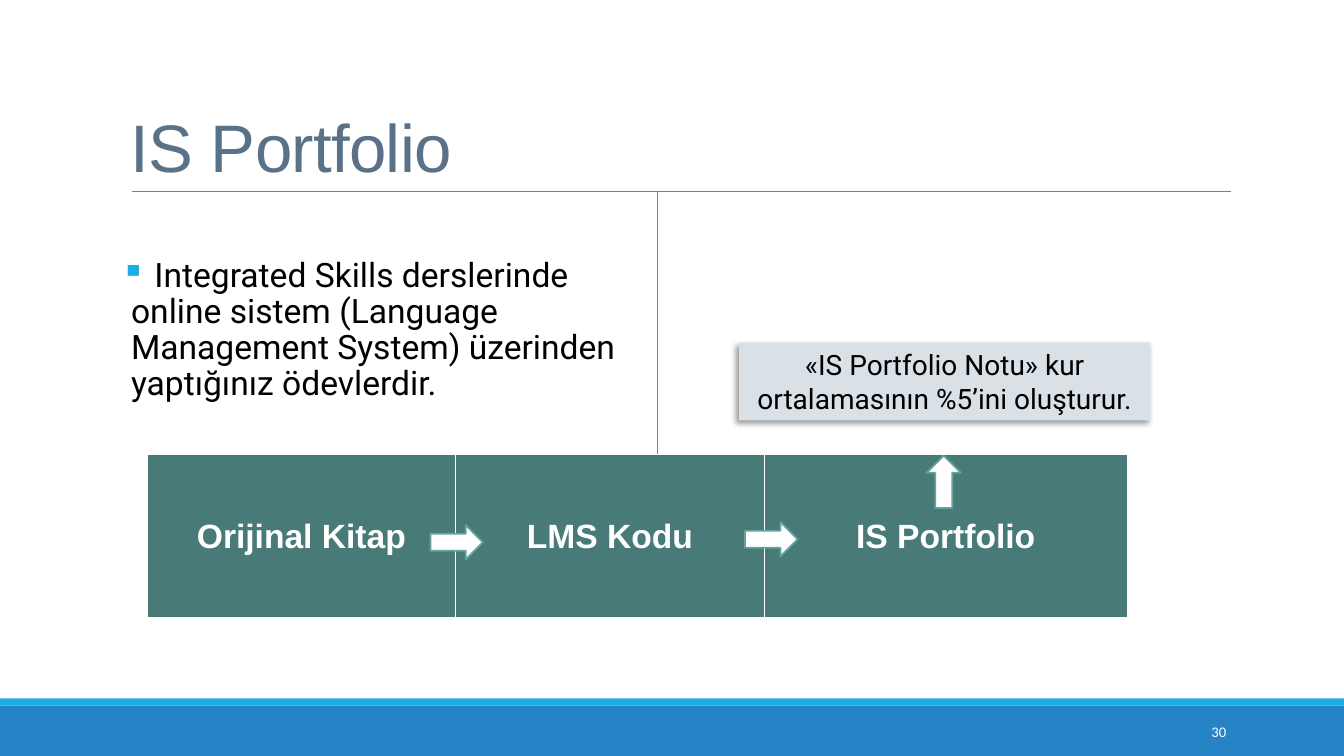
"""Build the IS Portfolio slide with its text, flow table and arrows."""
from lxml.etree import SubElement
from pptx import Presentation
from pptx.dml.color import RGBColor
from pptx.enum.shapes import MSO_CONNECTOR, MSO_SHAPE
from pptx.enum.text import MSO_ANCHOR, PP_ALIGN
from pptx.oxml import parse_xml
from pptx.oxml.ns import nsdecls, qn
from pptx.util import Inches, Pt

WHITE = RGBColor(0xFF, 0xFF, 0xFF)
BLACK = RGBColor(0, 0, 0)
GRAY = RGBColor(0x80, 0x80, 0x80)
BLUE = RGBColor(0x26, 0x83, 0xC6)
CYAN = RGBColor(0x1C, 0xAD, 0xE4)
SLATE = RGBColor(0x59, 0x72, 0x87)
PALE = RGBColor(0xD9, 0xE0, 0xE6)
TEAL = RGBColor(0x48, 0x7B, 0x78)
MINT = RGBColor(0x62, 0xA3, 0x9F)


def write(frame, text, align, **style):
    frame.word_wrap = True
    para = frame.paragraphs[0]
    para.alignment = align
    run = para.add_run()
    run.text = text
    color = style.pop("color")
    for key, value in style.items():
        setattr(run.font, key, value)
    run.font.color.rgb = color
    return para


def draw(kind, place, fill):
    shape = shapes.add_shape(kind, *map(Inches, place))
    shape.shadow.inherit = False
    shape.fill.solid()
    shape.fill.fore_color.rgb = fill
    shape.line.fill.background()
    return shape


deck = Presentation()
deck.slide_width, deck.slide_height = Inches(13.33), Inches(7.5)
slide = deck.slides.add_slide(deck.slide_layouts[6])
shapes = slide.shapes

draw(MSO_SHAPE.RECTANGLE, (0, 7, 13.33, 0.5), BLUE)
draw(MSO_SHAPE.RECTANGLE, (0, 6.93, 13.33, 0.07), CYAN)

for ends, width in [((1.31, 1.9, 12.21, 1.9), 0.5), ((6.52, 1.9, 6.52, 6.09), 1)]:
    rule = shapes.add_connector(MSO_CONNECTOR.STRAIGHT, *map(Inches, ends))
    rule.line.color.rgb = GRAY
    rule.line.width = Pt(width)
    SubElement(rule._element.spPr, qn("a:effectLst"))

title = shapes.add_textbox(Inches(1.2), Inches(0.31), Inches(11), Inches(1.59)).text_frame
title.vertical_anchor = MSO_ANCHOR.BOTTOM
para = write(title, "IS Portfolio", PP_ALIGN.LEFT, size=Pt(48), name="Arial", color=SLATE)
para.line_spacing = 0.85
para.runs[0].font._element.set("spc", "-50")

body = shapes.add_textbox(Inches(1.2), Inches(2.51), Inches(5.32), Inches(1.59)).text_frame
body.margin_left = body.margin_right = 0
para = write(
    body,
    " Integrated Skills derslerinde online sistem (Language Management System) üzerinden yaptığınız ödevlerdir.",
    PP_ALIGN.LEFT, size=Pt(24), name="Roboto", color=BLACK)
props = para._p.get_or_add_pPr()
props.set("marL", str(Inches(0.1)))
props.set("indent", str(Inches(-0.1)))
tint = SubElement(props, qn("a:buClr"))
SubElement(tint, qn("a:srgbClr"), val=str(CYAN))
SubElement(props, qn("a:buChar"), char="▪")
para.line_spacing = 0.9
para.space_after = Pt(2)

note = draw(MSO_SHAPE.RECTANGLE, (7.33, 3.4, 4.08, 0.77), PALE)
note.text_frame.vertical_anchor = MSO_ANCHOR.TOP
write(note.text_frame, "«IS Portfolio Notu» kur ortalamasının %5’ini oluşturur.",
      PP_ALIGN.CENTER, size=Pt(20), name="Roboto", color=BLACK)
glow = note._element.spPr.find(qn("a:effectLst"))
glow.append(parse_xml(
    f'<a:outerShdw {nsdecls("a")} blurRad="{Pt(4)}" dist="{Pt(3)}" dir="8100000" algn="tr" rotWithShape="0">'
    '<a:srgbClr val="000000"><a:alpha val="40000"/></a:srgbClr></a:outerShdw>'))

page = shapes.add_textbox(Inches(10.83), Inches(7.06), Inches(1.43), Inches(0.4)).text_frame
page.vertical_anchor = MSO_ANCHOR.MIDDLE
write(page, "30", PP_ALIGN.RIGHT, size=Pt(10.5), name="Calibri", color=WHITE)

table = shapes.add_table(1, 3, Inches(1.46), Inches(4.51), Inches(9.72), Inches(1.63)).table
steps = [("Orijinal Kitap", 3.06), ("LMS Kodu", 3.06), ("IS Portfolio", 3.6)]
for index, (label, width) in enumerate(steps):
    table.columns[index].width = Inches(width)
    cell = table.cell(0, index)
    cell.vertical_anchor = MSO_ANCHOR.MIDDLE
    write(cell.text_frame, label, PP_ALIGN.CENTER, size=Pt(24), name="Arial", bold=True, color=WHITE)
    props = cell._tc.get_or_add_tcPr()
    for side, weight in {"L": 1, "R": 1, "T": 1, "B": 3}.items():
        edge = SubElement(props, qn(f"a:ln{side}"), w=str(Pt(weight)))
        paint = SubElement(edge, qn("a:solidFill"))
        SubElement(paint, qn("a:srgbClr"), val=str(WHITE))
    cell.fill.solid()
    cell.fill.fore_color.rgb = TEAL

for left, top, turn in [(4.27, 5.21, 0), (7.39, 5.18, 0), (9.1, 4.61, 270)]:
    arrow = draw(MSO_SHAPE.RIGHT_ARROW, (left, top, 0.52, 0.34), WHITE)
    arrow.rotation = turn
    arrow.line.color.rgb = MINT
    arrow.line.width = Pt(1.25)

deck.save("out.pptx")
